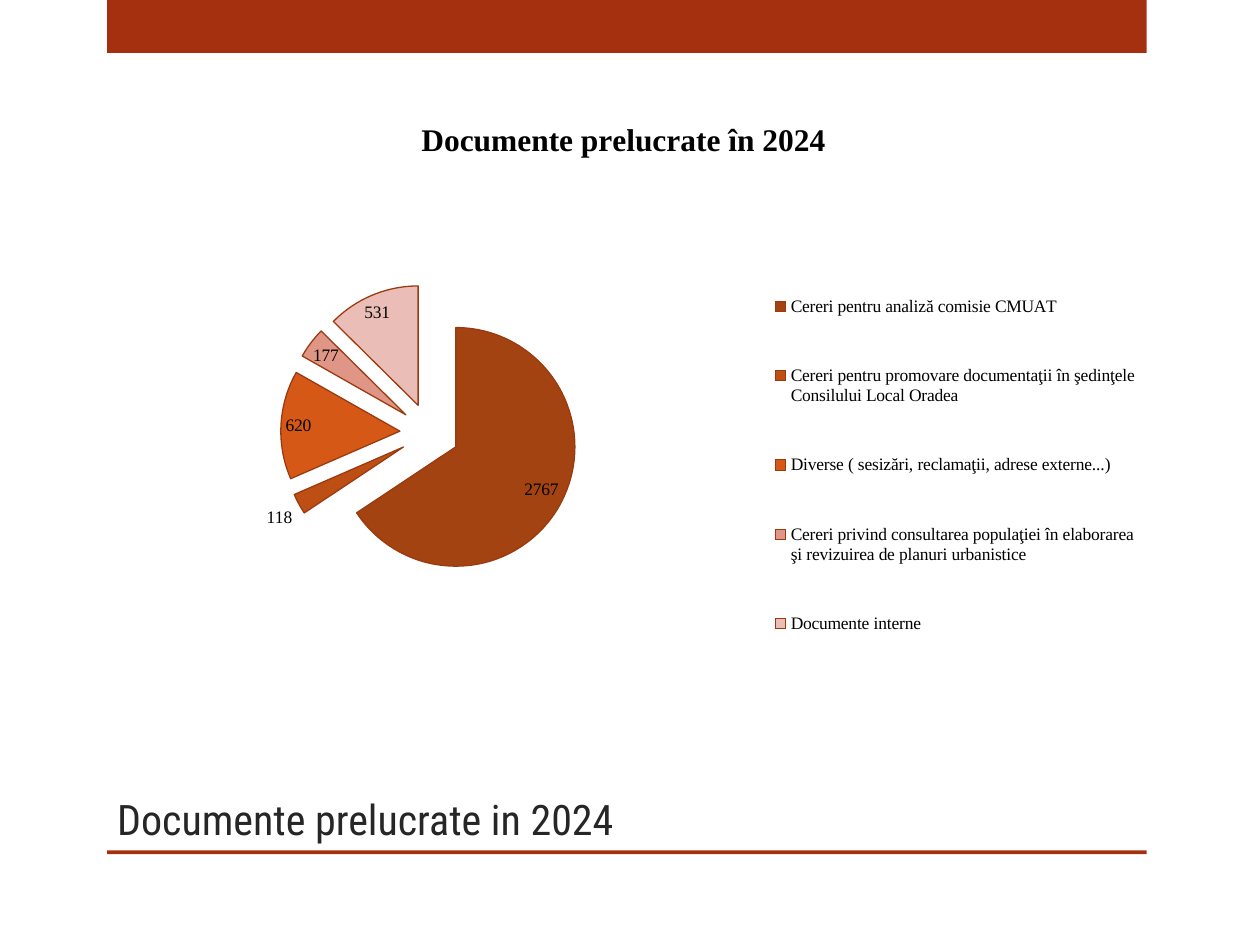
from dataclasses import dataclass

from lxml import etree
from pptx import Presentation
from pptx import util as u
from pptx.chart.data import CategoryChartData
from pptx.dml.color import RGBColor
from pptx.enum import chart as ch, shapes, text
from pptx.oxml.ns import qn


@dataclass(frozen=True)
class Theme:
    accent: str = "A5300F"
    title: str = "262626"
    chart_text: str = "000000"
    outline: str = "9C3A0F"
    slices: tuple = ("A24311", "BD4E14", "D55816", "E09687", "EABEB6")
    title_font: str = "Roboto Condensed"
    chart_font: str = "Times New Roman"
    title_size: int = 24
    chart_title_size: int = 18
    chart_size: int = 10


THEME = Theme()
DOCUMENTS = {
    "Cereri pentru analiză comisie CMUAT": 2767,
    "Cereri pentru promovare documentaţii în şedinţele Consilului Local Oradea": 118,
    "Diverse ( sesizări, reclamaţii, adrese externe...)": 620,
    "Cereri privind consultarea populaţiei în elaborarea şi revizuirea de planuri urbanistice": 177,
    "Documente interne": 531,
}


def inches(*box):
    return [u.Inches(v) for v in box]


def style_font(font, name, size, color, bold=False):
    font.name, font.size, font.bold = name, u.Pt(size), bold
    font.color.rgb = RGBColor.from_string(color)


def set_layout(parent, index, x, y, w=None, h=None, inner=False):
    """Place a chart part by fractions of the chart area."""
    for old in parent.findall(qn("c:layout")):
        parent.remove(old)
    layout = etree.Element(qn("c:layout"))
    manual = etree.SubElement(layout, qn("c:manualLayout"))
    values = {"xMode": "edge", "yMode": "edge", "x": x, "y": y, "w": w, "h": h}
    if inner:
        values = {"layoutTarget": "inner", **values}
    for tag, value in values.items():
        if value is not None:
            etree.SubElement(manual, qn(f"c:{tag}")).set("val", str(value))
    parent.insert(index, layout)


def add_bars(slide, left, width):
    for top, height in ((0, 0.42), (6.75, 0.03)):
        sp = slide.shapes.add_shape(
            shapes.MSO_SHAPE.RECTANGLE, *inches(left, top, width, height))
        sp.shadow.inherit = False
        sp.fill.solid()
        sp.fill.fore_color.rgb = RGBColor.from_string(THEME.accent)
        sp.line.fill.background()


def add_title(slide, box, wording):
    sp = slide.shapes.title
    sp.left, sp.top, sp.width, sp.height = inches(*box)
    tf = sp.text_frame
    tf.text = wording
    tf.vertical_anchor = text.MSO_ANCHOR.BOTTOM
    p = tf.paragraphs[0]
    p.alignment = text.PP_ALIGN.LEFT
    style_font(p.runs[0].font, THEME.title_font, THEME.title_size, THEME.title)


def add_documents_pie(slide, box, heading):
    data = CategoryChartData()
    data.categories = list(DOCUMENTS)
    data.add_series("Series 1", list(DOCUMENTS.values()))
    chart = slide.shapes.add_chart(
        ch.XL_CHART_TYPE.PIE, *inches(*box), data).chart
    body_font = (THEME.chart_font, THEME.chart_size, THEME.chart_text)
    style_font(chart.font, *body_font)

    title = chart.chart_title
    title.text_frame.text = heading
    style_font(title.text_frame.paragraphs[0].runs[0].font, THEME.chart_font,
               THEME.chart_title_size, THEME.chart_text, bold=True)
    title.include_in_layout = True
    set_layout(title._element, 1, 0.3, 0.03)

    chart.has_legend = True
    legend = chart.legend
    legend.position = ch.XL_LEGEND_POSITION.RIGHT
    legend.include_in_layout = True
    style_font(legend.font, *body_font)
    set_layout(legend._element, 1, 0.64, 0.23, 0.36, 0.66)

    plot = chart.plots[0]
    plot.vary_by_categories = True
    set_layout(plot._element.getparent(), 0, 0.063, 0.286, 0.501, 0.451, inner=True)
    series = plot.series[0]
    for i, color in enumerate(THEME.slices):
        fmt = series.points[i].format
        fmt.fill.solid()
        fmt.fill.fore_color.rgb = RGBColor.from_string(color)
        fmt.line.color.rgb = RGBColor.from_string(THEME.outline)
        fmt.line.width = u.Pt(0.75)
    explosion = etree.Element(qn("c:explosion"))
    explosion.set("val", "25")
    series._element.find(qn("c:dPt")).addprevious(explosion)

    labels = series.data_labels
    labels.show_value = True
    labels.position = ch.XL_LABEL_POSITION.BEST_FIT
    style_font(labels.font, *body_font)


def main():
    prs = Presentation()
    prs.slide_width, prs.slide_height = inches(10, 7.5)
    slide = prs.slides.add_slide(prs.slide_layouts[5])
    add_bars(slide, 0.85, 8.25)
    add_title(slide, (0.83, 5.92, 7.25, 0.83), "Documente prelucrate in 2024")
    add_documents_pie(slide, (0.83, 0.75, 8.25, 5.25), "Documente prelucrate în 2024")
    prs.save("out.pptx")


if __name__ == "__main__":
    main()
